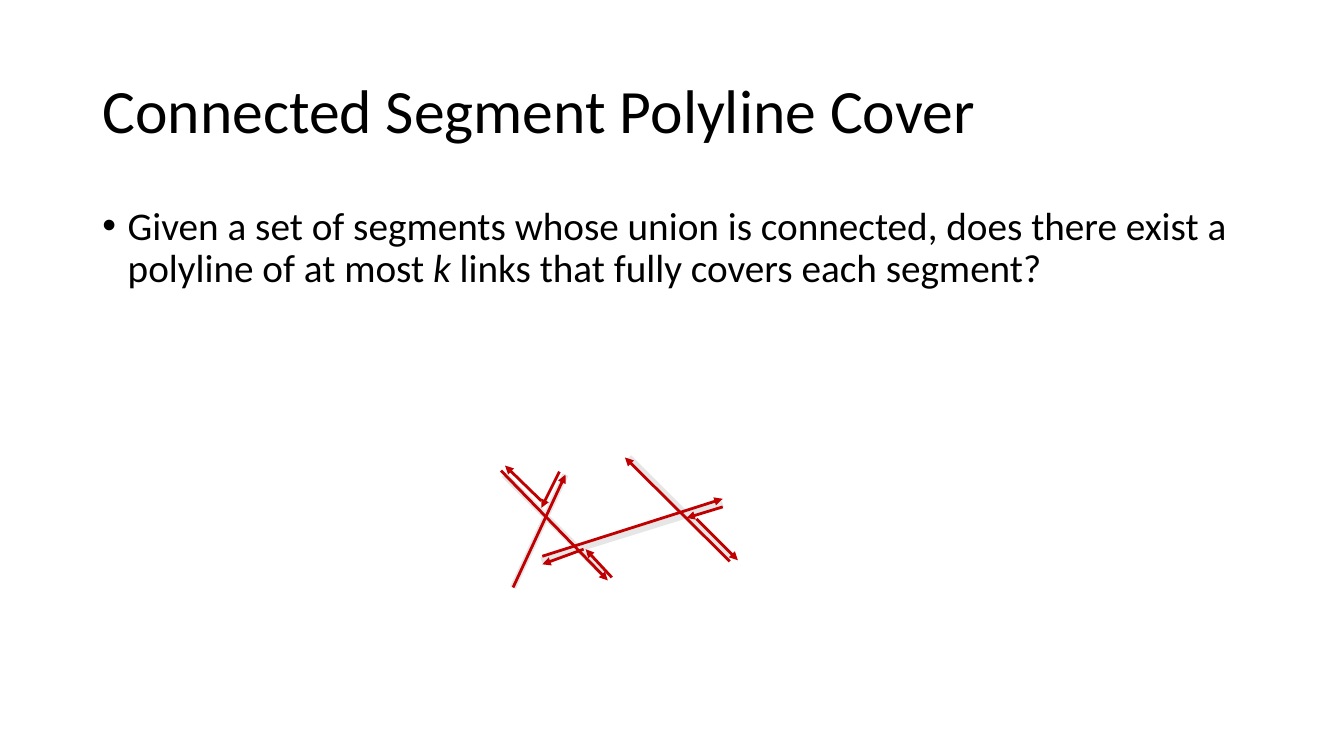
from dataclasses import dataclass

from lxml.etree import SubElement
from pptx import Presentation
from pptx.dml.color import RGBColor
from pptx.enum.shapes import MSO_CONNECTOR
from pptx.enum.text import MSO_ANCHOR, MSO_AUTO_SIZE, PP_ALIGN
from pptx.oxml.ns import qn
from pptx.util import Inches, Pt


@dataclass(frozen=True)
class Theme:
    font: str = "Calibri"
    text: str = "000000"
    segment: str = "E7E6E6"
    polyline: str = "C00000"
    title_size: int = 44
    body_size: int = 28
    segment_width: float = 4.5
    polyline_width: float = 2


COLUMNS = 40
SLIDE_WIDTH, SLIDE_HEIGHT = Inches(13.33), Inches(7.5)
CELL = SLIDE_WIDTH / COLUMNS  # square grid cell, a third of an inch


def grid(*counts):
    return [round(count * CELL) for count in counts]


def write_span(para, text, *, font, size, color, italic=False):
    span = para.add_run()
    span.text = text
    span.font.name = font
    span.font.size = Pt(size)
    span.font.italic = italic
    span.font.color.rgb = RGBColor.from_string(color)


class SlideBuilder:
    def __init__(self, page, theme):
        self.page = page
        self.theme = theme

    def fill_placeholder(self, box, area, spans, size, anchor, space_before=0):
        box.left, box.top, box.width, box.height = grid(*area)
        frame = box.text_frame
        frame.word_wrap = True
        frame.auto_size = MSO_AUTO_SIZE.NONE
        frame.vertical_anchor = anchor
        para = frame.paragraphs[0]
        para.alignment = PP_ALIGN.LEFT
        para.line_spacing = 0.9
        para.space_before = Pt(space_before)
        for text, italic in spans:
            write_span(para, text, font=self.theme.font, size=size,
                       color=self.theme.text, italic=italic)
        return para

    def title(self, text, area):
        self.fill_placeholder(self.page.shapes.title, area, [(text, False)],
                              self.theme.title_size, MSO_ANCHOR.MIDDLE)

    def bullet(self, spans, area):
        para = self.fill_placeholder(self.page.placeholders[1], area, spans,
                                     self.theme.body_size, MSO_ANCHOR.TOP, space_before=10)
        properties = para._p.get_or_add_pPr()
        properties.set("marL", str(Inches(0.25)))
        properties.set("indent", str(-Inches(0.25)))
        SubElement(properties, qn("a:buFont"), typeface="Arial")
        SubElement(properties, qn("a:buChar"), char="•")

    def line(self, start, end, color, width, arrow=False):
        connector = self.page.shapes.add_connector(
            MSO_CONNECTOR.STRAIGHT, *grid(*start), *grid(*end))
        connector.line.color.rgb = RGBColor.from_string(color)
        connector.line.width = Pt(width)
        if arrow:
            SubElement(connector.line._get_or_add_ln(), qn("a:tailEnd"), type="triangle")
        SubElement(connector._element.spPr, qn("a:effectLst"))

    def segment(self, start, end):
        self.line(start, end, self.theme.segment, self.theme.segment_width)

    def link(self, start, end):
        self.line(start, end, self.theme.polyline, self.theme.polyline_width, arrow=True)


# Ends of each line, in grid columns and rows
SEGMENTS = [
    ((15, 14.13), (18, 17.13)),
    ((16.11, 16.68), (21.51, 15)),
    ((18.72, 13.62), (21.72, 16.62)),
    ((16.83, 14.13), (15.27, 17.49)),
]
POLYLINE_LINKS = [
    ((15.27, 17.49), (16.83, 14.13)),
    ((16.65, 14.04), (16.11, 15.12)),
    ((16.11, 14.91), (15.03, 13.86)),
    ((14.91, 14.01), (18.09, 17.28)),
    ((18.21, 17.19), (17.43, 16.35)),
    ((17.37, 16.35), (16.14, 16.8)),
    ((16.14, 16.56), (21.51, 14.85)),
    ((21.51, 15.09), (20.43, 15.42)),
    ((20.73, 15.45), (21.96, 16.68)),
    ((21.72, 16.71), (18.6, 13.62)),
]


def main():
    deck = Presentation()
    deck.slide_width, deck.slide_height = SLIDE_WIDTH, SLIDE_HEIGHT
    page = deck.slides.add_slide(deck.slide_layouts[1])
    builder = SlideBuilder(page, Theme())

    # Title and problem statement
    builder.title("Connected Segment Polyline Cover", (2.75, 1.2, 34.5, 4.35))
    builder.bullet([
        ("Given a set of segments whose union is connected, "
         "does there exist a polyline of at most ", False),
        ("k", True),
        (" links that fully covers each segment?", False),
    ], (2.75, 6, 34.5, 14.28))

    # Segments, then the polyline that covers them
    for start, end in SEGMENTS:
        builder.segment(start, end)
    for start, end in POLYLINE_LINKS:
        builder.link(start, end)

    deck.save("out.pptx")


if __name__ == "__main__":
    main()
